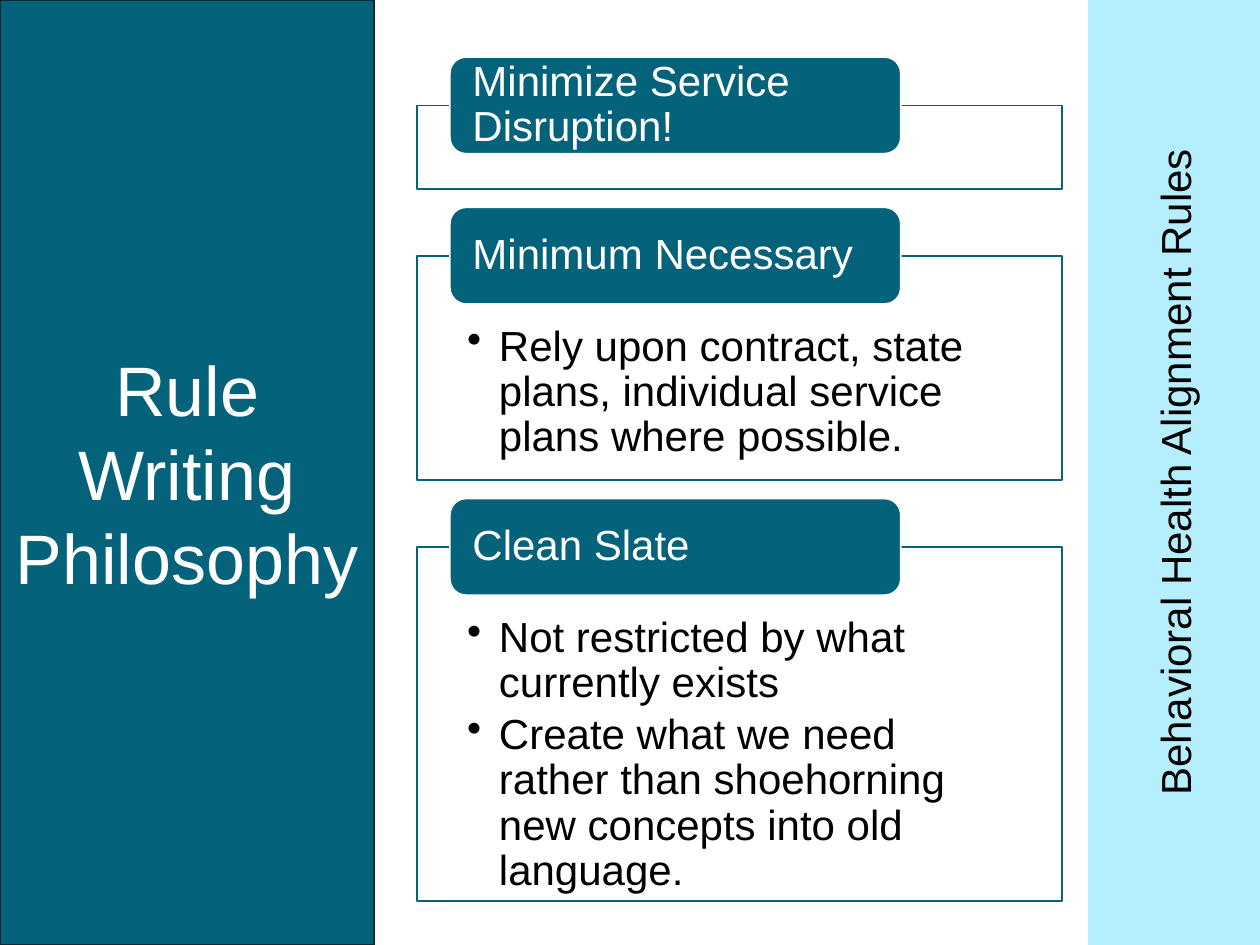
from lxml import etree
from pptx import Presentation
from pptx.dml.color import RGBColor
from pptx.enum.shapes import MSO_SHAPE
from pptx.enum.text import MSO_ANCHOR, PP_ALIGN
from pptx.oxml.ns import qn
from pptx.util import Cm, Pt

TITLE = "Rule Writing Philosophy"
SIDEBAR = "Behavioral Health Alignment Rules"
PRINCIPLES = [
    ("Minimize Service Disruption!", [], 1.68),
    ("Minimum Necessary",
     ["Rely upon contract, state plans, individual service plans where possible."], 4.52),
    ("Clean Slate",
     ["Not restricted by what currently exists",
      "Create what we need rather than shoehorning new concepts into old language."], 7.14),
]
COLORS = {"teal": "04627A", "edge": "022B35", "sky": "B5EEFD",
          "white": "FFFFFF", "black": "000000"}

SLIDE_W, SLIDE_H = 25.4, 19.05
TITLE_W = 7.54
SIDEBAR_W = 3.45
PANEL_LEFT, PANEL_TOP, PANEL_W, PANEL_GAP = 8.41, 2.13, 13.0, 1.35
TAB_LEFT, TAB_W, TAB_H, TAB_RISE = 9.07, 9.09, 1.95, 0.98
INDENT = 0.64


def rgb(name):
    return RGBColor.from_string(COLORS[name])


def add_block(slide, kind, box, fill, line):
    block = slide.shapes.add_shape(kind, *(Cm(length) for length in box))
    block.shadow.inherit = False
    block.fill.solid()
    block.fill.fore_color.rgb = rgb(fill)
    block.line.color.rgb = rgb(line)
    block.line.width = Pt(1)
    return block


def set_insets(frame, left, top, right, bottom):
    frame.margin_left, frame.margin_top = Cm(left), Cm(top)
    frame.margin_right, frame.margin_bottom = Cm(right), Cm(bottom)


def write(block, lines, size, color, align, anchor=MSO_ANCHOR.MIDDLE,
          spacing=None, after=None, bullet=False):
    frame = block.text_frame
    frame.word_wrap = True
    frame.vertical_anchor = anchor
    for index, line in enumerate(lines):
        paragraph = frame.paragraphs[0] if index == 0 else frame.add_paragraph()
        paragraph.text = line
        paragraph.alignment = align
        paragraph.line_spacing = spacing
        paragraph.space_after = after
        if bullet:
            properties = paragraph._p.get_or_add_pPr()
            properties.set("marL", str(Cm(INDENT)))
            properties.set("indent", str(-Cm(INDENT)))
            etree.SubElement(properties, qn("a:buChar"), char="•")
        paragraph.font.name = "Arial"
        paragraph.font.size = Pt(size)
        paragraph.font.color.rgb = rgb(color)


def add_principle(slide, heading, points, top, height):
    panel = add_block(slide, MSO_SHAPE.RECTANGLE,
                      (PANEL_LEFT, top, PANEL_W, height), "white", "teal")
    panel_color = panel.fill._xPr.find(qn("a:solidFill"))[0]
    etree.SubElement(panel_color, qn("a:alpha"), val="90000")
    if points:
        set_insets(panel.text_frame, 1.01, 1.39, 1.01, 0.48)
        write(panel, points, 24, "black", PP_ALIGN.LEFT, MSO_ANCHOR.TOP,
              spacing=0.9, after=Pt(3.6), bullet=True)
    tab = add_block(slide, MSO_SHAPE.ROUNDED_RECTANGLE,
                    (TAB_LEFT, top - TAB_RISE, TAB_W, TAB_H), "teal", "white")
    set_insets(tab.text_frame, 0.36, 0, 0.36, 0)
    write(tab, [heading], 24, "white", PP_ALIGN.LEFT, spacing=0.9)


def main():
    deck = Presentation()
    deck.slide_width, deck.slide_height = Cm(SLIDE_W), Cm(SLIDE_H)
    slide = deck.slides.add_slide(deck.slide_layouts[6])

    title = add_block(slide, MSO_SHAPE.RECTANGLE, (0, 0, TITLE_W, SLIDE_H), "teal", "edge")
    write(title, [TITLE], 40, "white", PP_ALIGN.CENTER)

    top = PANEL_TOP
    for heading, points, height in PRINCIPLES:
        add_principle(slide, heading, points, top, height)
        top += height + PANEL_GAP

    center_x, center_y = SLIDE_W - SIDEBAR_W / 2, SLIDE_H / 2
    sidebar = add_block(slide, MSO_SHAPE.RECTANGLE,
                        (center_x - SLIDE_H / 2, center_y - SIDEBAR_W / 2, SLIDE_H, SIDEBAR_W),
                        "sky", "sky")
    sidebar.rotation = 270
    write(sidebar, [SIDEBAR], 24, "black", PP_ALIGN.CENTER)

    deck.save("out.pptx")


if __name__ == "__main__":
    main()
